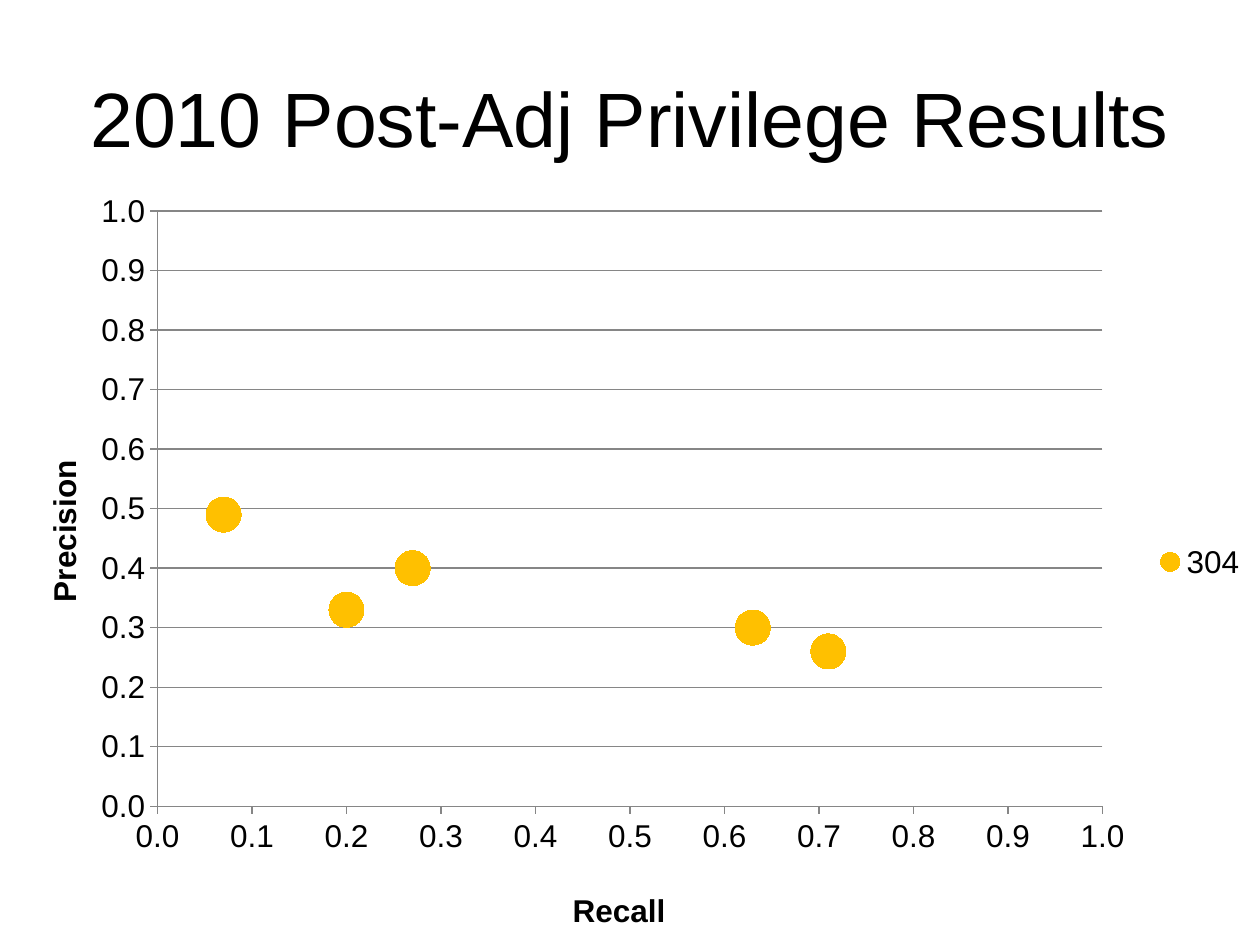
from dataclasses import dataclass

from lxml.etree import SubElement
from pptx import Presentation
from pptx.chart.data import XyChartData
from pptx.dml.color import RGBColor
from pptx.enum.chart import (
    XL_CHART_TYPE as ChartType,
    XL_LEGEND_POSITION as LegendPosition,
    XL_MARKER_STYLE as MarkerStyle,
    XL_TICK_MARK as TickMark,
)
from pptx.enum.text import MSO_ANCHOR as Anchor, PP_ALIGN as Align
from pptx.oxml.ns import qn
from pptx.util import Pt


@dataclass(frozen=True)
class Theme:
    font: str = "Arial"
    ink: RGBColor = RGBColor(0, 0, 0)
    grid: RGBColor = RGBColor(0x86, 0x86, 0x86)
    accent: RGBColor = RGBColor(0xFF, 0xC0, 0x00)
    title_size: int = 44
    chart_size: int = 18
    marker_size: int = 20


THEME = Theme()
RESULTS = [(0.63, 0.3), (0.71, 0.26), (0.27, 0.4), (0.2, 0.33), (0.07, 0.49)]


def style_font(font, size, bold=False):
    font.name = THEME.font
    font.size = Pt(size)
    font.bold = bold
    font.color.rgb = THEME.ink


def add_text(page, box, text, size, align=Align.LEFT, anchor=Anchor.TOP):
    frame = page.shapes.add_textbox(*map(Pt, box)).text_frame
    frame.word_wrap = True
    frame.vertical_anchor = anchor
    para = frame.paragraphs[0]
    para.alignment = align
    span = para.add_run()
    span.text = text
    style_font(span.font, size)


def place_part(part, position, **settings):
    for old in part.findall(qn("c:layout")):
        part.remove(old)
    layout = SubElement(part, qn("c:layout"))
    manual = SubElement(layout, qn("c:manualLayout"))
    for name, value in settings.items():
        SubElement(manual, qn(f"c:{name}")).set("val", str(value))
    part.insert(position, layout)


def style_axis(axis, title, left, top):
    axis.minimum_scale, axis.maximum_scale, axis.major_unit = 0, 1, 0.1
    axis.major_tick_mark = TickMark.OUTSIDE
    axis.minor_tick_mark = TickMark.NONE
    axis.tick_labels.number_format = "0.0"
    axis.tick_labels.number_format_is_linked = False
    style_font(axis.tick_labels.font, THEME.chart_size)
    axis.format.line.color.rgb = THEME.grid
    axis.format.line.width = Pt(0.75)
    frame = axis.axis_title.text_frame
    frame.text = title
    style_font(frame.paragraphs[0].runs[0].font, THEME.chart_size, bold=True)
    place_part(axis.axis_title._element, 1, xMode="edge", yMode="edge", x=left, y=top)


def add_results_chart(page, box):
    data = XyChartData(number_format="0.00")
    points = data.add_series("304")
    for recall, precision in RESULTS:
        points.add_data_point(recall, precision)
    chart = page.shapes.add_chart(ChartType.XY_SCATTER, *map(Pt, box), data).chart
    style_font(chart.font, THEME.chart_size)
    chart.has_title = False
    chart.has_legend = True
    chart.legend.position = LegendPosition.RIGHT
    chart.legend.include_in_layout = False

    style_axis(chart.category_axis, "Recall", 0.45, 0.92)
    style_axis(chart.value_axis, "Precision", 0.03, 0.36)
    chart.category_axis.has_major_gridlines = False
    chart.value_axis.has_major_gridlines = True
    grid = chart.value_axis.major_gridlines.format.line
    grid.color.rgb = THEME.grid
    grid.width = Pt(0.75)

    plot = chart.plots[0]
    plot.vary_by_categories = False
    series = plot.series[0]
    series.smooth = False
    series.format.line.fill.background()
    series.marker.style = MarkerStyle.CIRCLE
    series.marker.size = THEME.marker_size
    series.marker.format.fill.solid()
    series.marker.format.fill.fore_color.rgb = THEME.accent
    series.marker.format.line.color.rgb = THEME.accent
    place_part(
        chart._chartSpace.chart.plotArea, 0, layoutTarget="inner",
        xMode="edge", yMode="edge", x=0.125, y=0.042, w=0.75, h=0.777,
    )


def main():
    deck = Presentation()
    deck.slide_width, deck.slide_height = Pt(720), Pt(540)
    page = deck.slides.add_slide(deck.slide_layouts[6])
    add_text(
        page, (36, 21.6, 648, 90), "2010 Post-Adj Privilege Results",
        THEME.title_size, align=Align.CENTER, anchor=Anchor.MIDDLE,
    )
    add_results_chart(page, (0, 102.24, 720, 437.76))
    deck.save("out.pptx")


if __name__ == "__main__":
    main()
